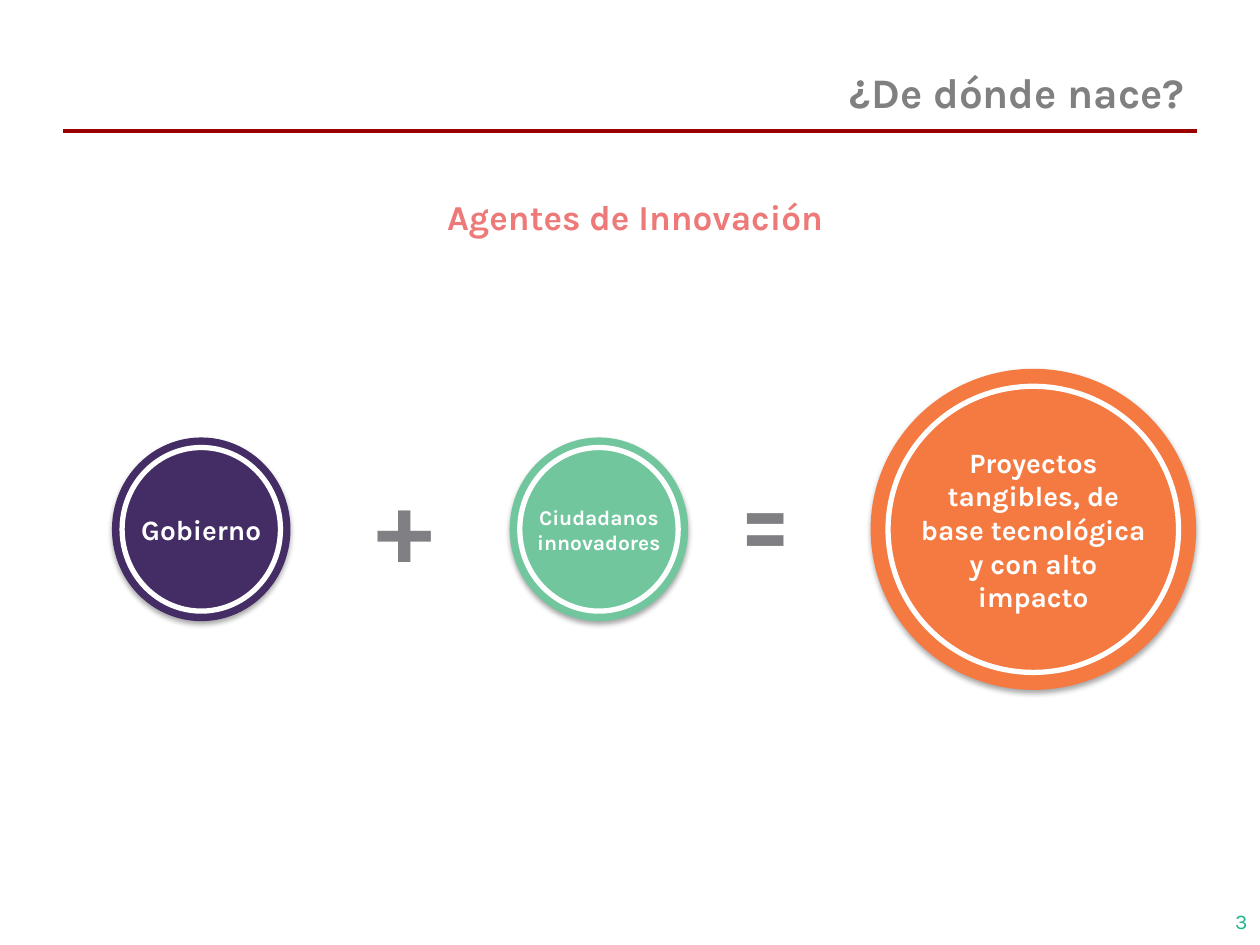
from lxml import etree
from pptx import Presentation
from pptx.dml.color import RGBColor
from pptx.enum.shapes import MSO_CONNECTOR, MSO_SHAPE
from pptx.enum.text import MSO_ANCHOR, PP_ALIGN
from pptx.oxml.ns import qn
from pptx.util import Pt

LINE = MSO_CONNECTOR.STRAIGHT
OVAL = MSO_SHAPE.OVAL
TOP, MIDDLE = MSO_ANCHOR.TOP, MSO_ANCHOR.MIDDLE
CENTER, RIGHT = PP_ALIGN.CENTER, PP_ALIGN.RIGHT

WHITE = RGBColor(0xFF, 0xFF, 0xFF)
GRAY = RGBColor(0x80, 0x80, 0x80)
SLATE = RGBColor(0x80, 0x7F, 0x83)
RED = RGBColor(0x99, 0x00, 0x00)
PINK = RGBColor(0xED, 0x7A, 0x79)
GREEN = RGBColor(0x1C, 0xB7, 0x8D)
ORANGE = RGBColor(0xF4, 0x7A, 0x41)
PURPLE = RGBColor(0x44, 0x2C, 0x65)
MINT = RGBColor(0x71, 0xC6, 0x9E)


def write(frame, text, size=16, color=WHITE, bold=True, align=CENTER, anchor=MIDDLE, font="Karla"):
    frame.word_wrap = True
    frame.vertical_anchor = anchor
    para = frame.paragraphs[0]
    para.alignment = align
    run = para.add_run()
    run.text = text
    run.font.name = font
    run.font.size = Pt(size)
    run.font.bold = bold
    run.font.color.rgb = color


def shade(shape, blur=3.1, dist=1.8, alpha=35):
    effects = shape._element.spPr.find(qn("a:effectLst"))
    shadow = etree.SubElement(effects, qn("a:outerShdw"), blurRad=str(Pt(blur)),
                              dist=str(Pt(dist)), dir="5400000", rotWithShape="0")
    tint = etree.SubElement(shadow, qn("a:srgbClr"), val="000000")
    etree.SubElement(tint, qn("a:alpha"), val=str(alpha * 1000))


class Board:
    def __init__(self, slide, stroke=3):
        self.slide = slide
        self.stroke = stroke

    def label(self, text, left, top, width, height, **style):
        box = self.slide.shapes.add_textbox(Pt(left), Pt(top), Pt(width), Pt(height))
        write(box.text_frame, text, **style)

    def rule(self, left, right, top, color, width=2):
        line = self.slide.shapes.add_connector(LINE, Pt(left), Pt(top), Pt(right), Pt(top))
        line.line.color.rgb = color
        line.line.width = Pt(width)
        etree.SubElement(line._element.spPr, qn("a:effectLst"))

    def oval(self, group, left, top, width, height):
        shape = group.shapes.add_shape(OVAL, Pt(left), Pt(top), Pt(width), Pt(height))
        shape.shadow.inherit = False
        return shape

    def disc(self, text, mid, width, height, color, inset, axis=302.5, **style):
        group = self.slide.shapes.add_group_shape()
        left, top = mid - width / 2, axis - height / 2
        disc = self.oval(group, left, top, width, height)
        disc.fill.solid()
        disc.fill.fore_color.rgb = color
        disc.line.fill.background()
        shade(disc)
        frame = disc.text_frame
        frame.margin_left = frame.margin_right = frame.margin_top = frame.margin_bottom = 0
        write(frame, text, **style)
        ring = self.oval(group, left + inset, top + inset, width - 2 * inset, height - 2 * inset)
        ring.fill.background()
        ring.line.color.rgb = WHITE
        ring.line.width = Pt(self.stroke)


def main():
    deck = Presentation()
    deck.slide_width, deck.slide_height = Pt(720), Pt(540)
    board = Board(deck.slides.add_slide(deck.slide_layouts[6]))

    board.label("¿De dónde nace?", 36, 30.5, 648, 44, size=24, color=GRAY, align=RIGHT)
    board.rule(36, 684, 75, RED)
    board.label("Agentes de Innovación", 36, 108, 654, 33, size=20, color=PINK, anchor=TOP)

    board.disc("Gobierno", 115, 102, 105, PURPLE, 5.75)
    board.disc("Ciudadanos innovadores", 342.25, 102, 105, MINT, 5.75, size=12)
    board.disc("Proyectos tangibles, de base tecnológica y con alto impacto",
               590.5, 186, 183.5, ORANGE, 10)
    for sign, left, top in (("+", 197.25, 259), ("=", 403, 255.5)):
        board.label(sign, left, top, 68.5, 76.5, size=60, color=SLATE)

    board.label("3", 552, 512, 168, 29, size=12, color=GREEN, bold=False, align=RIGHT)
    deck.save("out.pptx")


if __name__ == "__main__":
    main()
